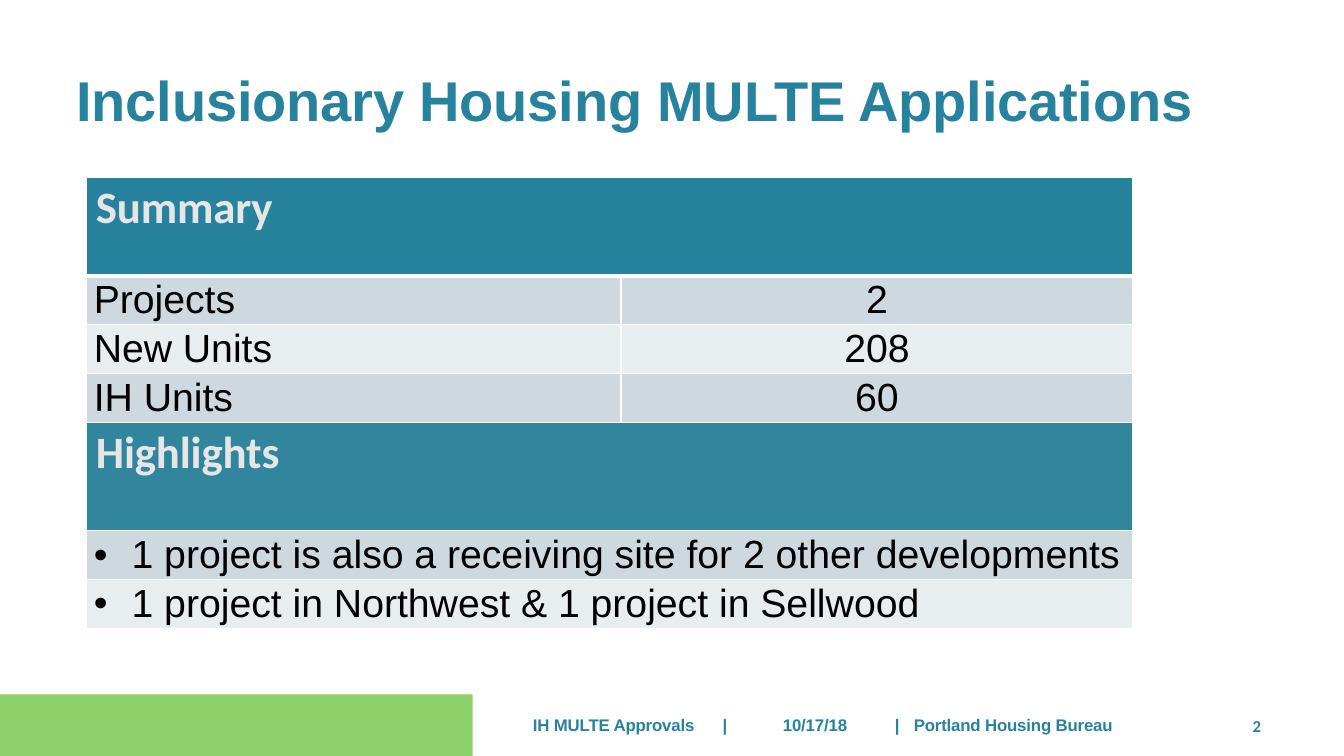
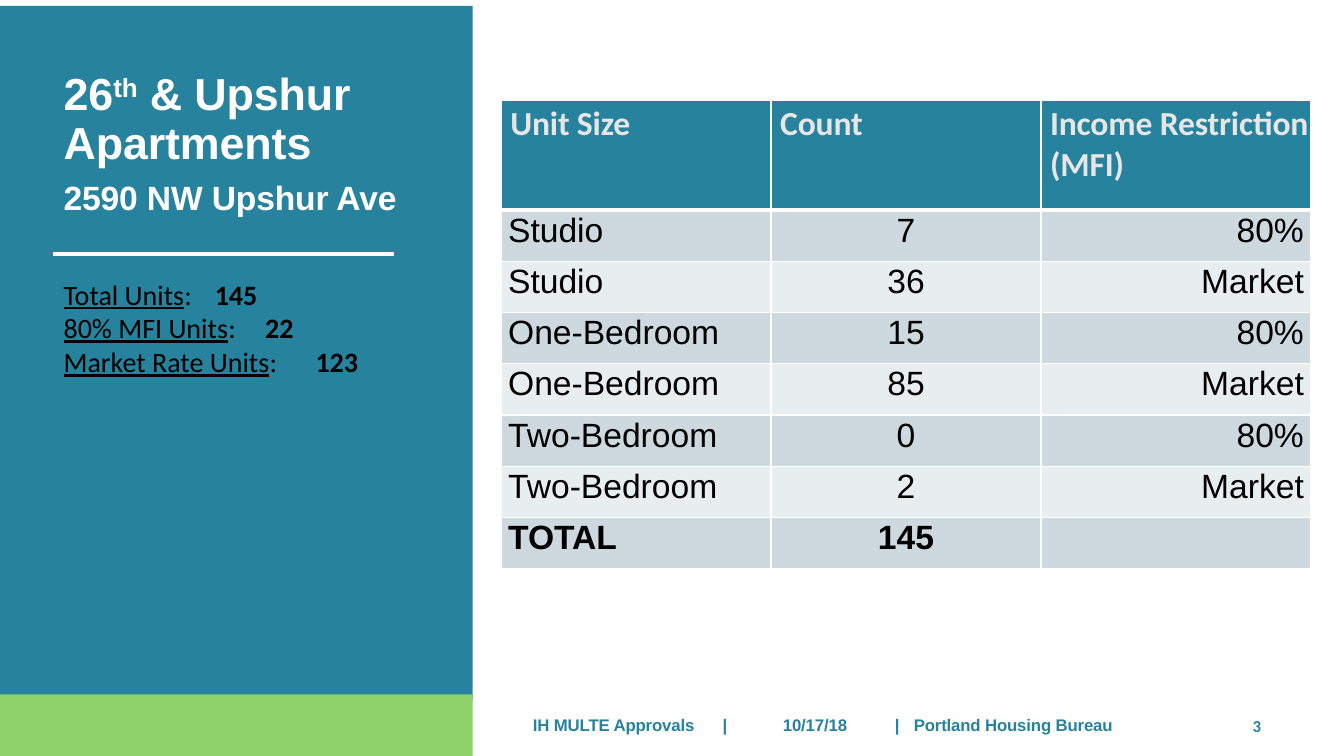
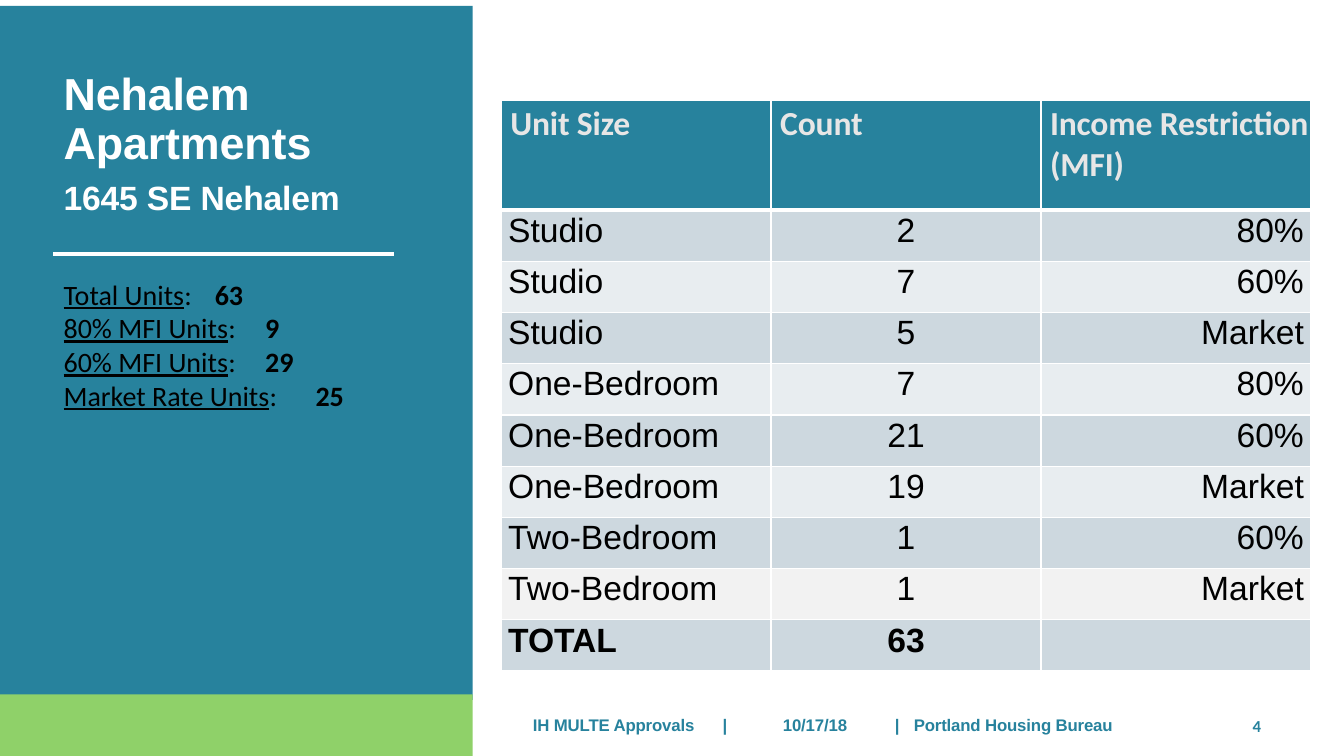
from copy import deepcopy

from lxml.etree import SubElement
from pptx import Presentation
from pptx.dml.color import RGBColor
from pptx.enum.shapes import MSO_CONNECTOR, MSO_SHAPE
from pptx.enum.text import MSO_ANCHOR, MSO_AUTO_SIZE, PP_ALIGN
from pptx.oxml.ns import qn
from pptx.util import Pt

COLORS = {
    "teal": "27829D", "teal_light": "31859C", "green": "8FD169",
    "white": "FFFFFF", "black": "000000", "header_text": "E7E6E6",
    "row_dark": "CDD8DF", "row_light": "E8EDF0", "row_gray": "F2F2F2",
}
PANEL_WIDTH = 337.7
BAND_TOP = 496
FOOTER = ["IH MULTE Approvals", "|", "10/17/18", "|", "Portland Housing Bureau"]
FOOTER_TABS = [135.5, 178.5, 258.5, 272]
ALIGNMENTS = [PP_ALIGN.LEFT, PP_ALIGN.CENTER, PP_ALIGN.RIGHT]
UNIT_HEADER = ["Unit Size", "Count", "Income Restriction (MFI)"]
UNIT_TABLE = {"at": (358, 72), "columns": [192.8] * 3, "header_size": 24,
              "body_size": 24, "header_heights": {0: 78}, "body_height": 36.6, "fills": {}}

SLIDES = [
    {
        "title": ["Inclusionary Housing MULTE Applications"],
        "table": {
            "at": (62, 127), "columns": [381.6, 365.6], "header_size": 32,
            "body_size": 28, "header_heights": {0: 70, 4: 77}, "body_height": 35,
            "fills": {4: "teal_light"},
        },
        "rows": [
            ["Summary"], ["Projects", "2"], ["New Units", "208"], ["IH Units", "60"],
            ["Highlights"],
            ["1 project is also a receiving site for 2 other developments"],
            ["1 project in Northwest & 1 project in Sellwood"],
        ],
    },
    {
        "title": ["26", "th", " & Upshur Apartments"],
        "address": "2590 NW Upshur Ave",
        "totals": [("Total Units", "145"), ("80% MFI Units", "22"),
                   ("Market Rate Units", "123")],
        "table": UNIT_TABLE,
        "rows": [
            UNIT_HEADER,
            ["Studio", "7", "80%"], ["Studio", "36", "Market"],
            ["One-Bedroom", "15", "80%"], ["One-Bedroom", "85", "Market"],
            ["Two-Bedroom", "0", "80%"], ["Two-Bedroom", "2", "Market"],
            ["TOTAL", "145", ""],
        ],
    },
    {
        "title": ["Nehalem Apartments"],
        "address": "1645 SE Nehalem",
        "totals": [("Total Units", "63"), ("80% MFI Units", "9"),
                   ("60% MFI Units", "29"), ("Market Rate Units", "25")],
        "table": {**UNIT_TABLE, "fills": {8: "row_gray"}},
        "rows": [
            UNIT_HEADER,
            ["Studio", "2", "80%"], ["Studio", "7", "60%"], ["Studio", "5", "Market"],
            ["One-Bedroom", "7", "80%"], ["One-Bedroom", "21", "60%"],
            ["One-Bedroom", "19", "Market"],
            ["Two-Bedroom", "1", "60%"], ["Two-Bedroom", "1", "Market"],
            ["TOTAL", "63", ""],
        ],
    },
]


def add_run(paragraph, text, size, color, font="Arial", bold=False, spacing=0):
    run = paragraph.add_run()
    run.text = text
    run.font.name = font
    run.font.size = Pt(size)
    run.font.bold = bold
    run.font.color.rgb = RGBColor.from_string(COLORS[color])
    if spacing:
        run.font._element.set("spc", str(spacing))
    return run


def set_frame(shape, left, top, width, height, inset_top=0):
    shape.left, shape.top, shape.width, shape.height = map(Pt, (left, top, width, height))
    frame = shape.text_frame
    frame.word_wrap = True
    frame.auto_size = MSO_AUTO_SIZE.NONE
    frame.vertical_anchor = MSO_ANCHOR.TOP
    frame.margin_left = frame.margin_right = frame.margin_bottom = 0
    frame.margin_top = Pt(inset_top)
    return frame


presentation = Presentation()
presentation.slide_width = Pt(960)
presentation.slide_height = Pt(540)

for number, content in enumerate(SLIDES, start=2):
    is_project = "totals" in content
    slide = presentation.slides.add_slide(presentation.slide_layouts[1 if is_project else 5])

    # Colour blocks, placed behind the placeholders
    blocks = [("green", BAND_TOP, 44)]
    if is_project:
        blocks.append(("teal", 4.2, 495.8))
    for color, top, height in blocks:
        block = slide.shapes.add_shape(
            MSO_SHAPE.RECTANGLE, 0, Pt(top), Pt(PANEL_WIDTH), Pt(height))
        block.shadow.inherit = False
        block.fill.solid()
        block.fill.fore_color.rgb = RGBColor.from_string(COLORS[color])
        block.line.fill.background()
        slide.shapes._spTree.insert(2, block._element)

    # Title
    title = slide.shapes.title
    if is_project:
        frame = set_frame(title, 45.4, 46, 255, 108, 5)
    else:
        frame = set_frame(title, 54.7, 46, 852, 50, 1)
    paragraph = frame.paragraphs[0]
    paragraph.alignment = PP_ALIGN.LEFT
    paragraph.space_before = Pt(5.2 if is_project else 1)
    for text in content["title"]:
        run = add_run(paragraph, text, 32 if is_project else 40,
                      "white" if is_project else "teal", bold=True, spacing=-10)
        if text == "th":
            run.font._element.set("baseline", "30000")

    if is_project:
        paragraph.line_spacing = Pt(34.7)
        paragraph.add_line_break()
        paragraph._p[-1].append(deepcopy(run.font._element))
        add_run(paragraph, content["address"], 24, "white", bold=True, spacing=-10)

        # Rule under the title
        rule = slide.shapes.add_connector(
            MSO_CONNECTOR.STRAIGHT, Pt(38), Pt(181.4), Pt(281.5), Pt(181.4))
        rule.line.color.rgb = RGBColor.from_string(COLORS["white"])
        rule.line.width = Pt(2.58)
        SubElement(rule._element.spPr, qn("a:effectLst"))

        # Unit totals
        frame = set_frame(slide.placeholders[1], 45.4, 189.4, 274, 150, 8.6)
        for index, (label, count) in enumerate(content["totals"]):
            paragraph = frame.add_paragraph() if index else frame.paragraphs[0]
            paragraph.space_before = Pt(0)
            properties = paragraph._p.get_or_add_pPr()
            properties.set("marL", "0")
            properties.set("indent", "0")
            SubElement(properties, qn("a:buNone"))
            tabs = SubElement(properties, qn("a:tabLst"))
            SubElement(tabs, qn("a:tab"), pos=str(Pt(216)), algn="l")
            add_run(paragraph, label, 20, "black", "Calibri").font.underline = True
            add_run(paragraph, ":\t", 20, "black", "Calibri")
            add_run(paragraph, count, 20, "black", "Calibri", bold=True)

    # Table
    style, rows = content["table"], content["rows"]
    heights = [style["header_heights"].get(index, style["body_height"])
               for index in range(len(rows))]
    table = slide.shapes.add_table(
        len(rows), len(style["columns"]), *map(Pt, style["at"]),
        Pt(sum(style["columns"])), Pt(sum(heights))).table
    table.horz_banding = False
    for column, width in zip(table.columns, style["columns"]):
        column.width = Pt(width)

    for row_index, texts in enumerate(rows):
        table.rows[row_index].height = Pt(heights[row_index])
        is_header = row_index in style["header_heights"]
        is_merged = len(texts) == 1
        if is_merged:
            table.cell(row_index, 0).merge(table.cell(row_index, len(style["columns"]) - 1))
        default_fill = "teal" if is_header else ("row_light", "row_dark")[row_index % 2]
        fill = style["fills"].get(row_index, default_fill)

        for column_index in range(len(style["columns"])):
            cell = table.cell(row_index, column_index)
            cell.fill.solid()
            cell.fill.fore_color.rgb = RGBColor.from_string(COLORS[fill])
            cell.margin_left = Pt(6.5 if is_header else 5)
            cell.margin_right = Pt(0 if is_header else 5)
            cell.margin_top = Pt(2 if is_header else 0)
            cell.margin_bottom = 0

            # White borders, heavier below the first row
            borders = {"lnL": 1, "lnR": 1, "lnT": 3 if row_index == 1 else 1,
                       "lnB": 3 if row_index == 0 else 1}
            cell_properties = cell._tc.get_or_add_tcPr()
            for position, (side, width) in enumerate(borders.items()):
                border = SubElement(cell_properties, qn("a:" + side), w=str(Pt(width)))
                border_fill = SubElement(border, qn("a:solidFill"))
                SubElement(border_fill, qn("a:srgbClr"), val=COLORS["white"])
                cell_properties.insert(position, border)

            if column_index >= len(texts) or not texts[column_index]:
                continue
            paragraph = cell.text_frame.paragraphs[0]
            if is_header:
                paragraph.space_before = Pt(2.1)
                add_run(paragraph, texts[column_index], style["header_size"],
                        "header_text", "Calibri", bold=True, spacing=-10)
                continue
            paragraph.alignment = ALIGNMENTS[column_index]
            paragraph.line_spacing = 1.05
            paragraph.space_after = Pt(8)
            if is_merged:
                properties = paragraph._p.get_or_add_pPr()
                properties.set("marL", str(Pt(27)))
                properties.set("indent", str(-Pt(27)))
                SubElement(properties, qn("a:buFont"), typeface="Arial")
                SubElement(properties, qn("a:buChar"), char="•")
            add_run(paragraph, texts[column_index], style["body_size"], "black",
                    bold=texts[0] == "TOTAL")

    # Footer and slide number
    footer = slide.shapes.add_textbox(0, 0, 0, 0)
    paragraph = set_frame(footer, 380.7, 511, 475, 15).paragraphs[0]
    paragraph.line_spacing = Pt(14.2)
    tabs = SubElement(paragraph._p.get_or_add_pPr(), qn("a:tabLst"))
    for position in FOOTER_TABS:
        SubElement(tabs, qn("a:tab"), pos=str(Pt(position)), algn="l")
    add_run(paragraph, "\t".join(FOOTER), 12, "teal", bold=True, spacing=-10)

    number_box = slide.shapes.add_textbox(0, 0, 0, 0)
    paragraph = set_frame(number_box, 894.7, 510, 12, 16.5, 1).paragraphs[0]
    add_run(paragraph, str(number), 12, "teal", "Calibri", bold=True)

presentation.save("out.pptx")
